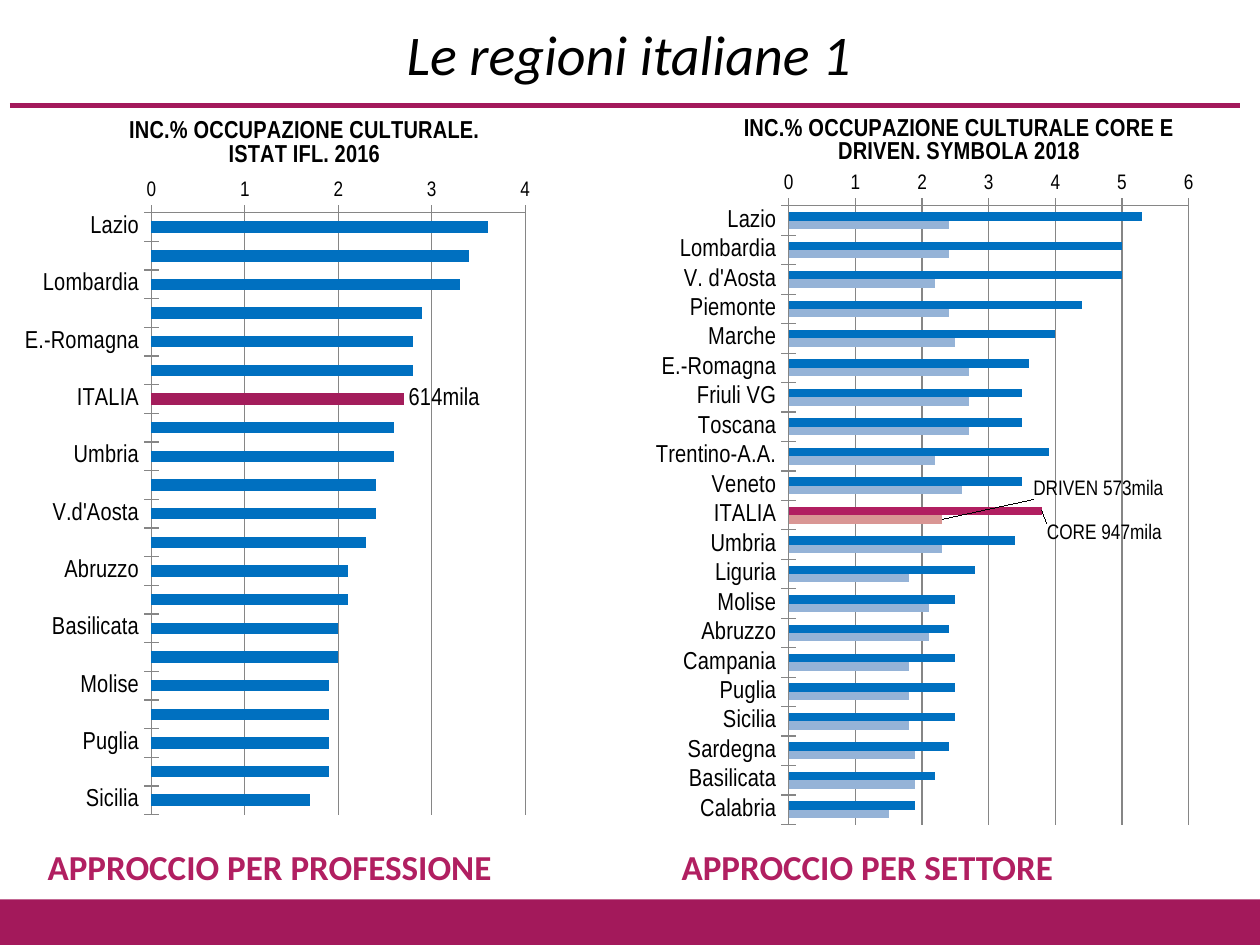
from lxml import etree
from pptx import Presentation
from pptx.chart.data import CategoryChartData
from pptx.dml.color import RGBColor
from pptx.enum.chart import XL_CHART_TYPE, XL_LABEL_POSITION, XL_TICK_MARK
from pptx.enum.shapes import MSO_CONNECTOR, MSO_SHAPE
from pptx.enum.text import MSO_ANCHOR, PP_ALIGN
from pptx.oxml.ns import qn
from pptx.util import Cm, Pt

BAR = XL_CHART_TYPE.BAR_CLUSTERED
OUT_END = XL_LABEL_POSITION.OUTSIDE_END
CROSS = XL_TICK_MARK.CROSS
LINE = MSO_CONNECTOR.STRAIGHT
RECT = MSO_SHAPE.RECTANGLE
MIDDLE = MSO_ANCHOR.MIDDLE
LEFT, CENTER = PP_ALIGN.LEFT, PP_ALIGN.CENTER

PROFESSION_REGIONS = [
    "Lazio", "Toscana", "Lombardia", "Piemonte", "E.-Romagna", "Liguria",
    "ITALIA", "Trentino- A.A.", "Umbria", "Marche", "V.d'Aosta", "Friuli VG",
    "Abruzzo", "Veneto", "Basilicata", "Sardegna", "Molise", "Calabria",
    "Puglia", "Campania", "Sicilia"]
PROFESSION = [3.6, 3.4, 3.3, 2.9, 2.8, 2.8, 2.7, 2.6, 2.6, 2.4, 2.4, 2.3,
              2.1, 2.1, 2, 2, 1.9, 1.9, 1.9, 1.9, 1.7]
SECTOR_REGIONS = [
    "Lazio", "Lombardia", "V. d'Aosta", "Piemonte", "Marche", "E.-Romagna",
    "Friuli VG", "Toscana", "Trentino-A.A.", "Veneto", "ITALIA", "Umbria",
    "Liguria", "Molise", "Abruzzo", "Campania", "Puglia", "Sicilia",
    "Sardegna", "Basilicata", "Calabria"]
SECTOR_1 = [5.3, 5, 5, 4.4, 4, 3.6, 3.5, 3.5, 3.9, 3.5, 3.8, 3.4, 2.8, 2.5,
            2.4, 2.5, 2.5, 2.5, 2.4, 2.2, 1.9]
SECTOR_2 = [2.4, 2.4, 2.2, 2.4, 2.5, 2.7, 2.7, 2.7, 2.2, 2.6, 2.3, 2.3, 1.8,
            2.1, 2.1, 1.8, 1.8, 1.8, 1.9, 1.9, 1.5]


def color(value):
    return RGBColor.from_string(value)


def set_font(font, name, size, hex_color="000000", bold=False, italic=False):
    font.name, font.size = name, Pt(size)
    font.bold, font.italic = bold, italic
    font.color.rgb = color(hex_color)


def write(tf, text, align=LEFT, spacing=None, **fmt):
    p = tf.paragraphs[0]
    p.alignment = align
    p.line_spacing = spacing
    r = p.add_run()
    r.text = text
    set_font(r.font, **fmt)


def set_layout(parent, index, **values):
    """Give a chart part a manual layout as fractions of the chart."""
    for old in parent.findall(qn("c:layout")):
        parent.remove(old)
    layout = etree.Element(qn("c:layout"))
    manual = etree.SubElement(layout, qn("c:manualLayout"))
    for tag, value in values.items():
        etree.SubElement(manual, qn(f"c:{tag}")).set("val", str(value))
    parent.insert(index, layout)


class Deck:
    text_font, chart_font = "Calibri", "Arial Narrow"
    band, accent, grid = "A3195B", "B11F61", "868686"

    def __init__(self, prs):
        self.s = prs.slides.add_slide(prs.slide_layouts[5])

    def title(self, text, *box):
        sp = self.s.shapes.title
        sp.left, sp.top, sp.width, sp.height = map(Cm, box)
        sp.text_frame.vertical_anchor = MIDDLE
        write(sp.text_frame, text, CENTER, 0.85, name=self.text_font, size=32,
              italic=True)

    def rule(self, x1, x2, y):
        line = self.s.shapes.add_connector(LINE, Cm(x1), Cm(y), Cm(x2), Cm(y))
        line.line.color.rgb = color(self.band)
        line.line.width = Pt(2.5)
        etree.SubElement(line._element.spPr, qn("a:effectLst"))

    def footer(self, *box):
        sp = self.s.shapes.add_shape(RECT, *map(Cm, box))
        sp.shadow.inherit = False
        sp.fill.solid()
        sp.fill.fore_color.rgb = color(self.band)
        sp.line.fill.background()

    def caption(self, text, *box):
        tf = self.s.shapes.add_textbox(*map(Cm, box)).text_frame
        tf.word_wrap = True
        write(tf, text, name=self.text_font, size=20, hex_color=self.accent,
              bold=True)

    def axis(self, axis, size):
        axis.major_tick_mark = CROSS
        axis.minor_tick_mark = XL_TICK_MARK.NONE
        axis.format.line.color.rgb = color(self.grid)
        set_font(axis.tick_labels.font, self.chart_font, size)

    def chart(self, box, title, title_at, plot_box, regions, maximum, series):
        """Each series: values, colour, highlight colour, label, size, shift."""
        data = CategoryChartData()
        data.categories = regions
        for n, (values, *_) in enumerate(series, 1):
            data.add_series(f"Series {n}", values)
        chart = self.s.shapes.add_chart(BAR, *map(Cm, box), data).chart
        set_font(chart.font, self.chart_font, 12)
        chart.has_legend = False

        # Chart title and plot area
        chart.has_title = True
        write(chart.chart_title.text_frame, title, CENTER,
              name=self.chart_font, size=14, bold=True)
        x, y = title_at
        set_layout(chart.chart_title._element, 1, xMode="edge", yMode="edge",
                   x=x, y=y)
        x, y, w, h = plot_box
        set_layout(chart._chartSpace.chart.plotArea, 0, layoutTarget="inner",
                   xMode="edge", yMode="edge", x=x, y=y, w=w, h=h)

        # Axes
        cat, val = chart.category_axis, chart.value_axis
        self.axis(cat, 14)
        self.axis(val, 12)
        cat.reverse_order = True
        val.minimum_scale, val.maximum_scale, val.major_unit = 0, maximum, 1
        val.tick_labels.number_format = "0"
        val.tick_labels.number_format_is_linked = False
        val.has_major_gridlines = True
        val.major_gridlines.format.line.color.rgb = color(self.grid)

        # Bars, with the national one highlighted and labelled
        plot = chart.plots[0]
        plot.vary_by_categories = False
        plot.gap_width, plot.overlap = 150, 0
        for ser, (_, fill, mark, label, size, shift) in zip(plot.series, series):
            ser.invert_if_negative = False
            point = ser.points[regions.index("ITALIA")]
            for part, hex_color in ((ser, fill), (point, mark)):
                part.format.fill.solid()
                part.format.fill.fore_color.rgb = color(hex_color)
            write(point.data_label.text_frame, label, name=self.chart_font,
                  size=size)
            point.data_label.position = OUT_END
            if shift:
                dlbl = point.data_label._get_or_add_dLbl()
                set_layout(dlbl, 1, x=shift[0], y=shift[1])


def main():
    prs = Presentation()
    prs.slide_width, prs.slide_height = Cm(25.4), Cm(19.05)
    deck = Deck(prs)

    # Frame and title
    deck.rule(0.2, 25, 2.13)
    deck.footer(0, 18.13, 25.4, 0.99)
    deck.title("Le regioni italiane 1", 1.25, -0.08, 22.86, 2.51)

    # Employment by profession
    deck.chart((0.5, 2.13, 10.4, 14.6),
               "INC.% OCCUPAZIONE CULTURALE. ISTAT IFL. 2016", (0.19, 0.01),
               (0.242, 0.148, 0.728, 0.831), PROFESSION_REGIONS, 4,
               [(PROFESSION, "0070C0", "A31D5B", "614mila", 14, None)])

    # Employment by sector
    deck.chart((12.7, 1.93, 11.6, 15.01),
               "INC.% OCCUPAZIONE CULTURALE CORE E DRIVEN. SYMBOLA 2018",
               (0.19, 0.02), (0.276, 0.148, 0.695, 0.831), SECTOR_REGIONS, 6,
               [(SECTOR_1, "0070C0", "B11F61", "CORE 947mila", 12,
                 (0, 0.03)),
                (SECTOR_2, "95B3D7", "D99694", "DRIVEN 573mila", 12,
                 (0.15, -0.04))])

    # Captions
    for text, left in (("APPROCCIO PER PROFESSIONE", 0.71),
                       ("APPROCCIO PER SETTORE", 13.49)):
        deck.caption(text, left, 16.92, 11.4, 1.12)

    prs.save("out.pptx")


if __name__ == "__main__":
    main()
